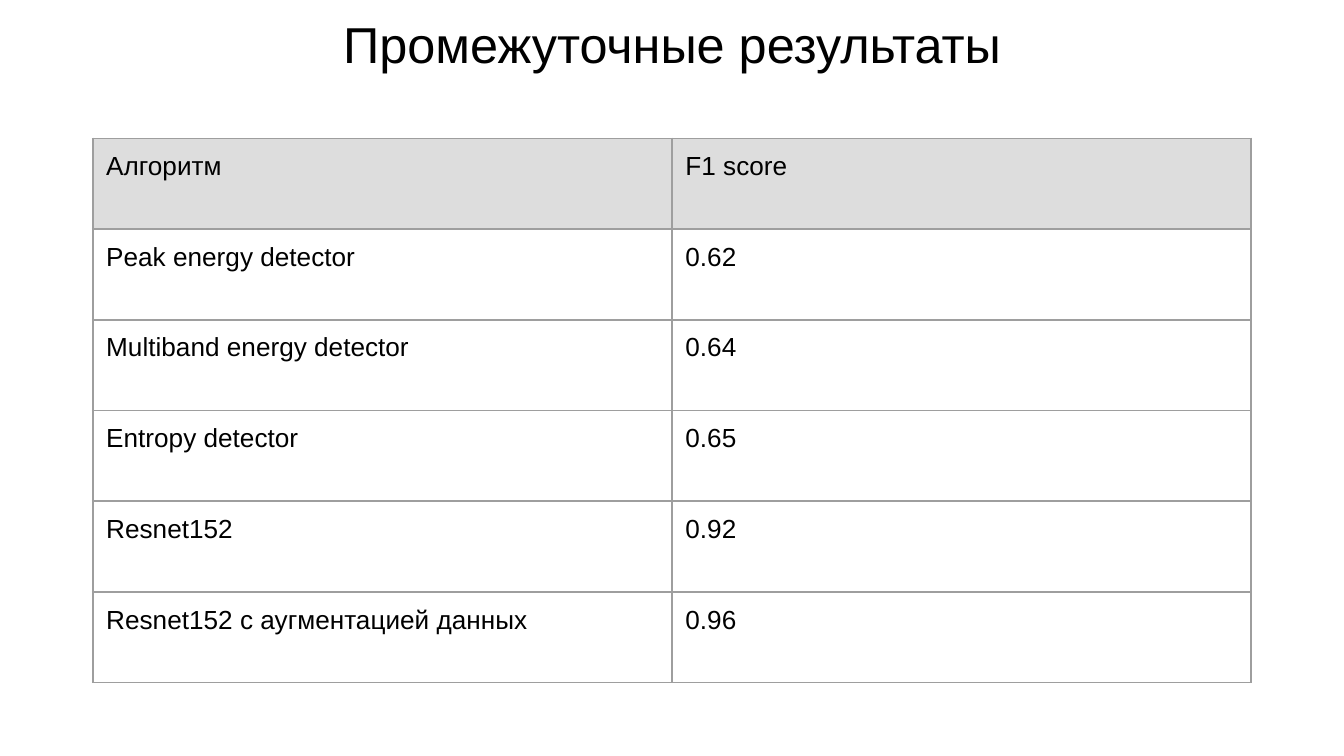
from lxml import etree
from pptx import Presentation
from pptx import util as u
from pptx.dml.color import RGBColor
from pptx.enum import text
from pptx.oxml import ns

BLACK = RGBColor(0x00, 0x00, 0x00)
HEADER_GRAY = RGBColor(0xDD, 0xDD, 0xDD)
BORDER_GRAY = RGBColor(0x9E, 0x9E, 0x9E)

SLIDE_WIDTH = u.Inches(10)
SLIDE_HEIGHT = SLIDE_WIDTH * 9 // 16
PADDING = u.Inches(0.1)
MARGINS = {f"margin_{side}": PADDING for side in ("left", "top", "right", "bottom")}
TITLE_FONT = {"name": "Arial", "size": u.Pt(27)}
CELL_FONT = {"name": "Arial", "size": u.Pt(14), "bold": False}

RESULTS = [
    ("Алгоритм", "F1 score"),
    ("Peak energy detector", "0.62"),
    ("Multiband energy detector", "0.64"),
    ("Entropy detector", "0.65"),
    ("Resnet152", "0.92"),
    ("Resnet152 с аугментацией данных", "0.96"),
]


def set_attributes(target, values):
    for name, value in values.items():
        setattr(target, name, value)


def write_text(frame, content, font):
    paragraph = frame.paragraphs[0]
    run = paragraph.add_run()
    run.text = content
    set_attributes(run.font, font)
    run.font.color.rgb = BLACK
    return paragraph


def add_cell_borders(cell, color, width):
    """Draw all four sides; call before filling, as borders precede the fill."""
    properties = cell._tc.get_or_add_tcPr()
    for side in ("lnL", "lnR", "lnT", "lnB"):
        line = etree.SubElement(properties, ns.qn(f"a:{side}"), w=str(width))
        fill = etree.SubElement(line, ns.qn("a:solidFill"))
        etree.SubElement(fill, ns.qn("a:srgbClr"), val=str(color))


def add_title(slide, content, left, top, width, height):
    frame = slide.shapes.add_textbox(left, top, width, height).text_frame
    set_attributes(frame, {
        **MARGINS,
        "word_wrap": True,
        "vertical_anchor": text.MSO_ANCHOR.TOP,
    })
    write_text(frame, content, TITLE_FONT).alignment = text.PP_ALIGN.CENTER


def add_results_table(slide, rows, left, top, width, height):
    column_count = len(rows[0])
    table = slide.shapes.add_table(
        len(rows), column_count, left, top, width, height).table
    table.horz_banding = False
    for column in table.columns:
        column.width = width // column_count
    for row_index, values in enumerate(rows):
        table.rows[row_index].height = height // len(rows)
        for column_index, value in enumerate(values):
            cell = table.cell(row_index, column_index)
            set_attributes(cell, MARGINS)
            add_cell_borders(cell, BORDER_GRAY, u.Pt(1))
            if row_index == 0:
                cell.fill.solid()
                cell.fill.fore_color.rgb = HEADER_GRAY
            else:
                cell.fill.background()
            write_text(cell.text_frame, value, CELL_FONT)


def main():
    presentation = Presentation()
    presentation.slide_width = SLIDE_WIDTH
    presentation.slide_height = SLIDE_HEIGHT
    slide = presentation.slides.add_slide(presentation.slide_layouts[6])
    add_title(slide, "Промежуточные результаты",
              u.Inches(0.34), u.Inches(0), u.Inches(9.32), u.Inches(0.63))
    add_results_table(slide, RESULTS,
                      u.Inches(0.69), u.Inches(1.03), u.Inches(8.62), u.Inches(4.05))
    presentation.save("out.pptx")


if __name__ == "__main__":
    main()
